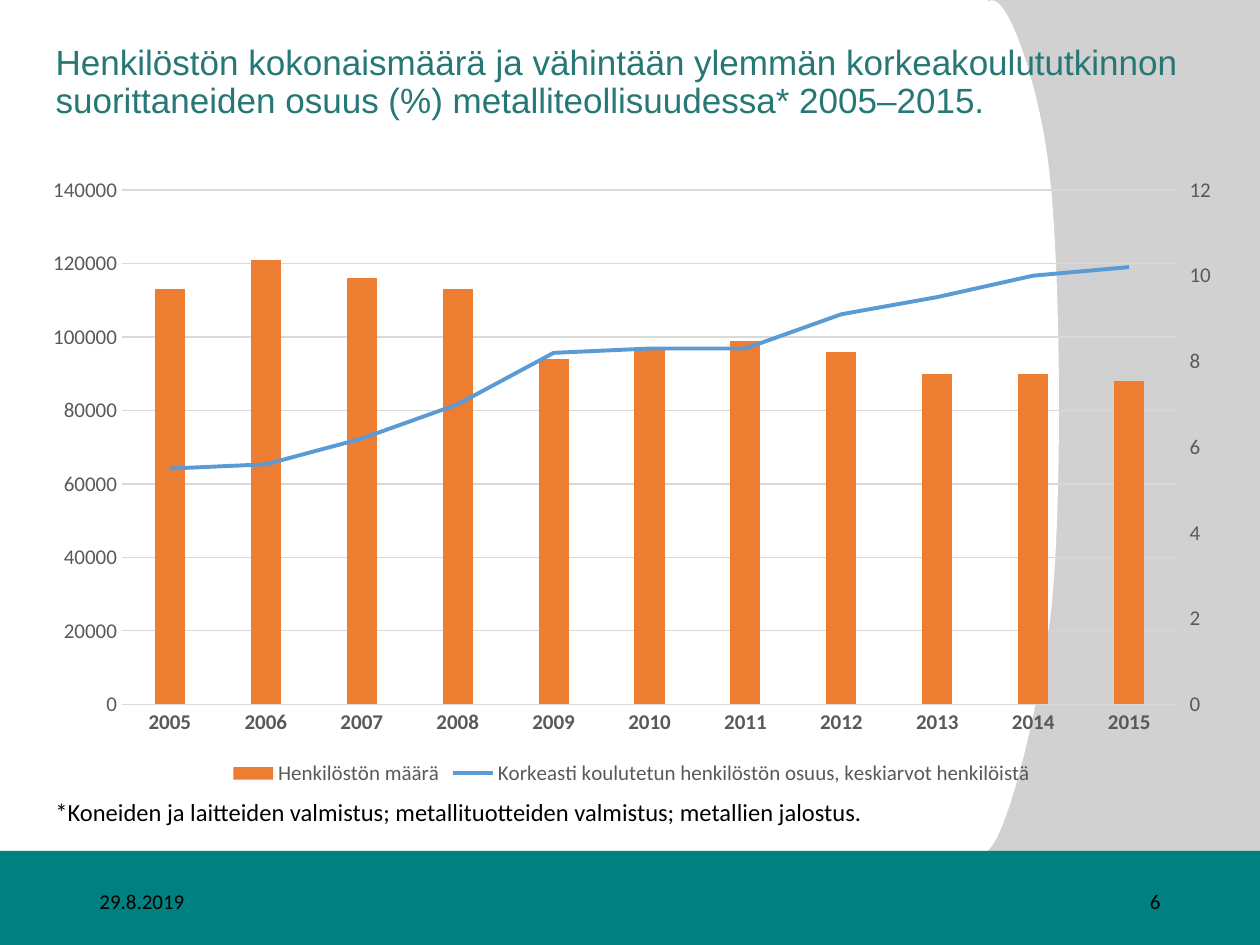
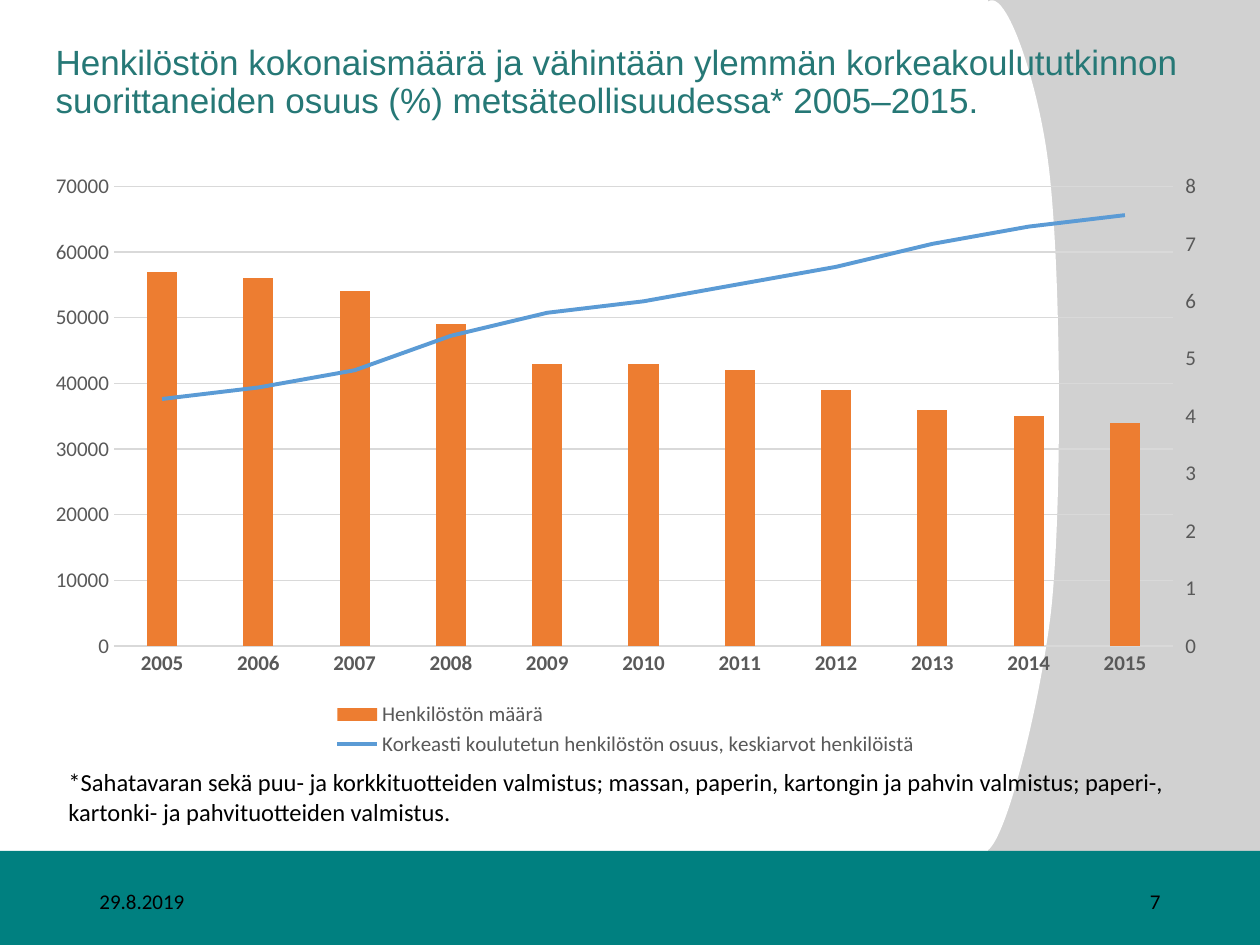
from copy import deepcopy
from lxml import etree
from pptx import Presentation, util as u
from pptx.chart.data import CategoryChartData
from pptx.dml.color import RGBColor
from pptx.enum import chart as ch, shapes, text
from pptx.oxml.ns import qn

EMU_PER_PX = 914400 / 126
COLORS = dict(teal="008080", title="267876", side="A5A5A5", white="FFFFFF", text="000000",
              axis="595959", grid="D9D9D9", staff="ED7D31", share="5B9BD5")
TITLE_BOX = (43, 23, 1177, 120)
DATE_BOX = (87, 876, 283, 50)
NUMBER_BOX = (890, 876, 283, 50)
SIDE_BOX = (988, 0, 272, 926)
BAND_BOX = (0, 851, 1260, 94)

# White bulge: its box, then start point and Bézier segments of its outline
BULGE_BOX = (965, 0, 93, 852)
BULGE_START = (976, 42)
BULGE_CURVES = [
    [(988, -69), (1036, 66), (1048, 161)],
    [(1061, 257), (1063, 503), (1051, 612)],
    [(1038, 723), (987, 921), (974, 827)],
    [(961, 731), (964, 152), BULGE_START],
]

YEARS = [str(year) for year in range(2005, 2016)]
STAFF_NAME = "Henkilöstön määrä"
SHARE_NAME = "Korkeasti koulutetun henkilöstön osuus, keskiarvot henkilöistä"
TITLE = ("Henkilöstön kokonaismäärä ja vähintään ylemmän korkeakoulututkinnon "
         "suorittaneiden osuus (%) {}* 2005–2015.")

INDUSTRIES = [
    dict(
        number=6, industry="metalliteollisuudessa",
        chart_box=(29, 165, 1206, 626), note_box=(43, 791, 1177, 43),
        staff=[113000, 121000, 116000, 113000, 94000, 97000, 99000, 96000, 90000, 90000, 88000],
        share=[5.5, 5.6, 6.2, 7, 8.2, 8.3, 8.3, 9.1, 9.5, 10, 10.2],
        staff_scale=(140000, 20000), share_scale=(12, 2),
        note="*Koneiden ja laitteiden valmistus; metallituotteiden valmistus; metallien jalostus.",
    ),
    dict(
        number=7, industry="metsäteollisuudessa",
        chart_box=(32, 162, 1188, 600), note_box=(56, 761, 1164, 72),
        staff=[57000, 56000, 54000, 49000, 43000, 43000, 42000, 39000, 36000, 35000, 34000],
        share=[4.3, 4.5, 4.8, 5.4, 5.8, 6, 6.3, 6.6, 7, 7.3, 7.5],
        staff_scale=(70000, 10000), share_scale=(8, 1),
        note="*Sahatavaran sekä puu- ja korkkituotteiden valmistus; massan, paperin, kartongin "
             "ja pahvin valmistus; paperi-, kartonki- ja pahvituotteiden valmistus.",
    ),
]


def emu(box):
    return [u.Emu(round(n * EMU_PER_PX)) for n in box]


def color(name):
    return RGBColor.from_string(COLORS[name])


def set_font(font, size, fill, name="Calibri", bold=False):
    font.size, font.name, font.bold = u.Pt(size), name, bold
    font.color.rgb = color(fill)


def paint(sp, fill):
    sp.shadow.inherit = False
    sp.fill.solid()
    sp.fill.fore_color.rgb = color(fill)
    sp.line.fill.background()


def add_bulge(s):
    """Span the box with a freeform, then give it the curved outline."""
    left, top, width, height = BULGE_BOX
    builder = s.shapes.build_freeform(*BULGE_START, scale=EMU_PER_PX)
    builder.add_line_segments([(left, top), (left + width, top + height)], close=True)
    bulge = builder.convert_to_shape()
    for line in bulge.element.xpath(".//a:lnTo"):
        line.getparent().remove(line)
    close = bulge.element.xpath(".//a:close")[0]
    for curve in BULGE_CURVES:
        bezier = etree.Element(qn("a:cubicBezTo"))
        for x, y in curve:
            etree.SubElement(bezier, qn("a:pt"), x=str(x - left), y=str(y - top))
        close.addprevious(bezier)
    return bulge


def decorate_layout(layout, s):
    """Draw the backdrop on slide s and move it into the layout all slides share."""
    for ph in list(layout.placeholders):
        if ph.placeholder_format.type != shapes.PP_PLACEHOLDER.TITLE:
            ph.element.getparent().remove(ph.element)

    side = s.shapes.add_shape(shapes.MSO_SHAPE.RECTANGLE, *emu(SIDE_BOX))
    paint(side, "side")
    side_color = side.element.spPr.find(qn("a:solidFill"))[0]
    etree.SubElement(side_color, qn("a:alpha"), val="50000")

    band = s.shapes.add_shape(shapes.MSO_SHAPE.RECTANGLE, *emu(BAND_BOX))
    paint(band, "teal")

    bulge = add_bulge(s)
    paint(bulge, "white")

    tree = layout.element.cSld.spTree
    for index, sp in enumerate([side, bulge, band], start=2):
        tree.insert(index, sp.element)


def add_title(s, wording):
    title = s.shapes.title
    title.left, title.top, title.width, title.height = emu(TITLE_BOX)
    tf = title.text_frame
    tf.text = wording
    tf.vertical_anchor = text.MSO_ANCHOR.MIDDLE
    tf.auto_size = text.MSO_AUTO_SIZE.NONE
    p = tf.paragraphs[0]
    p.alignment, p.line_spacing = text.PP_ALIGN.LEFT, 0.9
    set_font(p.font, 20, "title", "Arial")


def add_text(s, box, wording, size, align=text.PP_ALIGN.LEFT, anchor=text.MSO_ANCHOR.TOP):
    tf = s.shapes.add_textbox(*emu(box)).text_frame
    tf.word_wrap, tf.vertical_anchor = True, anchor
    tf.text = wording
    p = tf.paragraphs[0]
    p.alignment = align
    set_font(p.font, size, "text")


def add_footer(s, number):
    middle = text.MSO_ANCHOR.MIDDLE
    add_text(s, DATE_BOX, "29.8.2019", 12, anchor=middle)
    add_text(s, NUMBER_BOX, str(number), 12, text.PP_ALIGN.RIGHT, middle)


def set_scale(axis, scale):
    axis.minimum_scale = 0
    axis.maximum_scale, axis.major_unit = scale


def format_axes(chart, scale):
    cat, val = chart.category_axis, chart.value_axis
    for axis in (cat, val):
        axis.major_tick_mark = axis.minor_tick_mark = ch.XL_TICK_MARK.NONE
        set_font(axis.tick_labels.font, 12, "axis", bold=axis is cat)
    val.format.line.fill.background()
    val.has_major_gridlines = True
    for line in (cat.format.line, val.major_gridlines.format.line):
        line.color.rgb, line.width = color("grid"), u.Pt(0.75)
    set_scale(val, scale)


def move_share_to_right_axis(chart, scale):
    """Turn the second series into a line on its own value axis."""
    area = chart.element.xpath("//c:plotArea")[0]
    bars, cat, val = (area.find(qn(tag)) for tag in ("c:barChart", "c:catAx", "c:valAx"))
    ser = bars.findall(qn("c:ser"))[1]
    for flag in ser.findall(qn("c:invertIfNegative")):
        ser.remove(flag)

    lines = etree.Element(qn("c:lineChart"))
    etree.SubElement(lines, qn("c:grouping"), val="standard")
    etree.SubElement(lines, qn("c:varyColors"), val="0")
    lines.append(ser)
    etree.SubElement(lines, qn("c:marker"), val="1")
    bars.addnext(lines)

    right_cat, right_val = deepcopy(cat), deepcopy(val)
    for axis, own, other in ((right_cat, "1001", "1002"), (right_val, "1002", "1001")):
        etree.SubElement(lines, qn("c:axId"), val=own)
        axis.find(qn("c:axId")).set("val", own)
        axis.find(qn("c:crossAx")).set("val", other)
    right_cat.find(qn("c:delete")).set("val", "1")
    right_val.find(qn("c:axPos")).set("val", "r")
    right_val.find(qn("c:crosses")).set("val", "max")
    right_val.find(qn("c:majorTickMark")).set("val", "out")
    right_val.remove(right_val.find(qn("c:majorGridlines")))
    scaling = right_val.find(qn("c:scaling"))
    scaling.find(qn("c:max")).set("val", str(scale[0]))
    right_val.find(qn("c:majorUnit")).set("val", str(scale[1]))
    val.addnext(right_val)
    right_val.addnext(right_cat)


def add_staff_chart(s, box, staff, share, staff_scale, share_scale):
    data = CategoryChartData()
    data.categories = YEARS
    data.add_series(STAFF_NAME, staff)
    data.add_series(SHARE_NAME, share)
    chart = s.shapes.add_chart(ch.XL_CHART_TYPE.COLUMN_CLUSTERED, *emu(box), data).chart
    set_font(chart.font, 10, "text")
    chart.has_title = False
    chart.has_legend = True
    chart.legend.position = ch.XL_LEGEND_POSITION.BOTTOM
    chart.legend.include_in_layout = False
    set_font(chart.legend.font, 12, "axis")
    format_axes(chart, staff_scale)
    move_share_to_right_axis(chart, share_scale)

    bars, lines = chart.plots
    bars.gap_width, bars.vary_by_categories = 219, False
    fill = bars.series[0].format.fill
    fill.solid()
    fill.fore_color.rgb = color("staff")
    curve = lines.series[0]
    curve.smooth = False
    curve.marker.style = ch.XL_MARKER_STYLE.NONE
    curve.format.line.color.rgb, curve.format.line.width = color("share"), u.Pt(2.25)


def add_industry(s, d):
    add_footer(s, d["number"])
    add_title(s, TITLE.format(d["industry"]))
    add_staff_chart(s, d["chart_box"], d["staff"], d["share"], d["staff_scale"], d["share_scale"])
    add_text(s, d["note_box"], d["note"], 14)


def main():
    prs = Presentation()
    prs.slide_width, prs.slide_height = emu((1260, 945))
    layout = prs.slide_layouts.get_by_name("Title Only")
    slides = [prs.slides.add_slide(layout) for _ in INDUSTRIES]
    decorate_layout(layout, slides[0])
    for s, industry in zip(slides, INDUSTRIES):
        add_industry(s, industry)
    prs.save("out.pptx")


if __name__ == "__main__":
    main()
